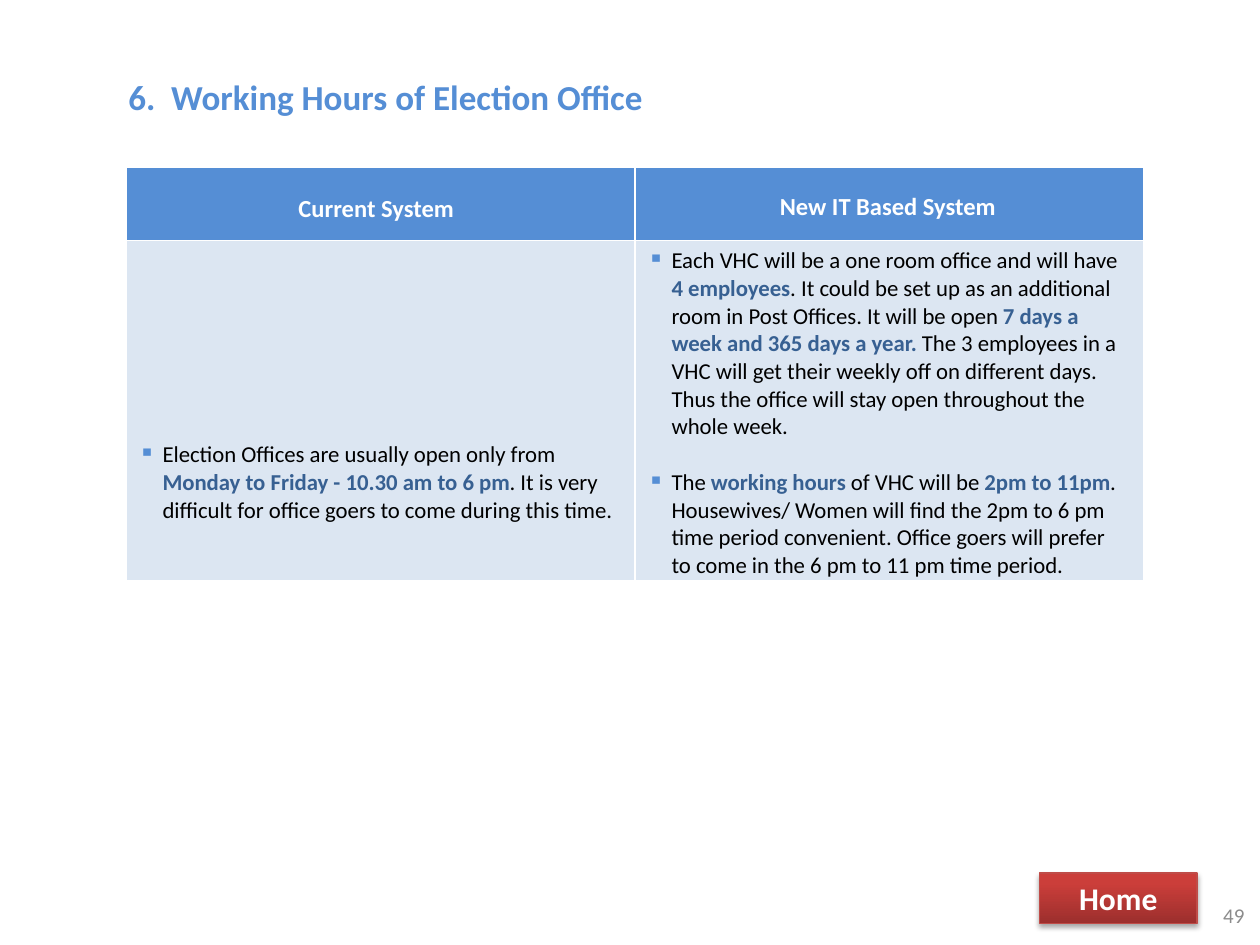
from lxml import etree
from pptx import Presentation
from pptx.dml.color import RGBColor
from pptx.enum.shapes import MSO_SHAPE
from pptx.enum.text import MSO_ANCHOR, PP_ALIGN
from pptx.oxml import parse_xml
from pptx.oxml.ns import nsdecls, qn
from pptx.util import Inches, Pt

RECT = MSO_SHAPE.RECTANGLE
TOP, MIDDLE = MSO_ANCHOR.TOP, MSO_ANCHOR.MIDDLE
LEFT, CENTER = PP_ALIGN.LEFT, PP_ALIGN.CENTER
FONT = "Calibri"
BLUE, NAVY, PALE = "558ED5", "376092", "DCE6F2"
WHITE, BLACK, GRAY = "FFFFFF", "000000", "8C8C8C"

# Each bullet is a list of runs: (text, is key phrase)
CURRENT = [
    [("Election Offices are usually open only from ", False),
     ("Monday to Friday - 10.30 am to 6 pm", True),
     (". It is very difficult for office goers to come during this time.", False)],
]
PLANNED = [
    [("Each VHC will be a one room office and will have ", False),
     ("4 employees", True),
     (". It could be set up as an additional room in Post Offices. "
      "It will be open ", False),
     ("7 days a week and 365 days a year. ", True),
     ("The 3 employees in a VHC will get their weekly off on different days. "
      "Thus the office will stay open throughout the whole week.", False)],
    [("The ", False), ("working hours ", True), ("of VHC will be ", False),
     ("2pm to 11pm", True),
     (". Housewives/ Women will find the 2pm to 6 pm time period convenient. "
      "Office goers will prefer to come in the 6 pm to 11 pm time period.", False)],
]


def color(code):
    return RGBColor.from_string(code)


def style(font, size, code, bold=False):
    font.name, font.size, font.bold = FONT, Pt(size), bold
    font.color.rgb = color(code)


def write(shape, text, size, code, bold=False, align=LEFT, anchor=MIDDLE):
    frame = shape.text_frame
    frame.word_wrap = True
    frame.vertical_anchor = anchor
    frame.text = text
    para = frame.paragraphs[0]
    para.alignment = align
    style(para.font, size, code, bold)


def add_label(slide, box, *args, **kwargs):
    write(slide.shapes.add_textbox(*map(Inches, box)), *args, **kwargs)


def add_rect(slide, box):
    shape = slide.shapes.add_shape(RECT, *map(Inches, box))
    shape.shadow.inherit = False
    return shape


def add_header(slide, box, text):
    shape = add_rect(slide, box)
    shape.fill.solid()
    shape.fill.fore_color.rgb = color(BLUE)
    shape.line.fill.background()
    write(shape, text, 14, WHITE, bold=True)


def add_button(slide, box, text):
    shape = add_rect(slide, box)
    shape.fill.gradient()
    shape.fill.gradient_angle = 90
    for stop, (spot, code) in zip(shape.fill.gradient_stops,
                                  [(0, "9C2F2D"), (0.8, "CB3E3A")]):
        stop.position = spot
        stop.color.rgb = color(code)
    shape.line.color.rgb = color("BF4C48")
    shape.line.width = Pt(0.75)
    effects = shape.element.spPr.find(qn("a:effectLst"))
    effects.append(parse_xml(
        f'<a:outerShdw {nsdecls("a")} blurRad="{Pt(3.1)}" dist="{Pt(1.8)}" '
        'dir="5400000" rotWithShape="0"><a:srgbClr val="000000">'
        '<a:alpha val="35000"/></a:srgbClr></a:outerShdw>'))
    write(shape, text, 18, WHITE, bold=True, align=CENTER)


def paint(cell, code):
    """Give a cell white borders and a plain fill."""
    props = cell._tc.get_or_add_tcPr()
    for side in "LRTB":
        props.append(parse_xml(
            f'<a:ln{side} {nsdecls("a")} w="{Pt(1)}"><a:solidFill>'
            f'<a:srgbClr val="{WHITE}"/></a:solidFill></a:ln{side}>'))
    cell.fill.solid()
    cell.fill.fore_color.rgb = color(code)


def add_bullet(para):
    props = para._p.get_or_add_pPr()
    props.set("marL", str(Inches(0.19)))
    props.set("indent", str(-Inches(0.19)))
    tint = etree.SubElement(props, qn("a:buClr"))
    etree.SubElement(tint, qn("a:srgbClr"), val=BLUE)
    etree.SubElement(props, qn("a:buChar"), char="▪")


def fill_cell(cell, items, top):
    cell.margin_top, cell.margin_bottom = Inches(top), 0
    cell.margin_right = Inches(0.12)
    frame = cell.text_frame
    for i, runs in enumerate(items):
        para = frame.add_paragraph() if i else frame.paragraphs[0]
        if i:
            para.space_before = Pt(15.9)
        add_bullet(para)
        for text, key in runs:
            run = para.add_run()
            run.text = text
            style(run.font, 13, NAVY if key else BLACK, key)


def add_grid(slide):
    box = map(Inches, (1, 1.33, 8.08, 3.28))
    table = slide.shapes.add_table(2, 2, *box).table
    for row, high, code in zip(table.rows, (0.58, 2.7), (BLUE, PALE)):
        row.height = Inches(high)
        for cell in row.cells:
            paint(cell, code)
    fill_cell(table.cell(1, 0), CURRENT, 1.59)
    fill_cell(table.cell(1, 1), PLANNED, 0.05)


def main():
    deck = Presentation()
    deck.slide_width, deck.slide_height = Inches(10), Inches(7.5)
    slide = deck.slides.add_slide(deck.slide_layouts[6])
    add_label(slide, (0.92, 0.55, 8, 0.44), "6.  Working Hours of Election Office",
              20, BLUE, bold=True, anchor=TOP)
    add_grid(slide)
    add_header(slide, (6.09, 1.46, 1.95, 0.34), "New IT Based System")
    add_header(slide, (2.27, 1.48, 1.48, 0.34), "Current System")
    add_button(slide, (8.25, 6.93, 1.25, 0.4), "Home")
    add_label(slide, (9.61, 7.03, 0.39, 0.47), "49", 12, GRAY)
    deck.save("out.pptx")


if __name__ == "__main__":
    main()
